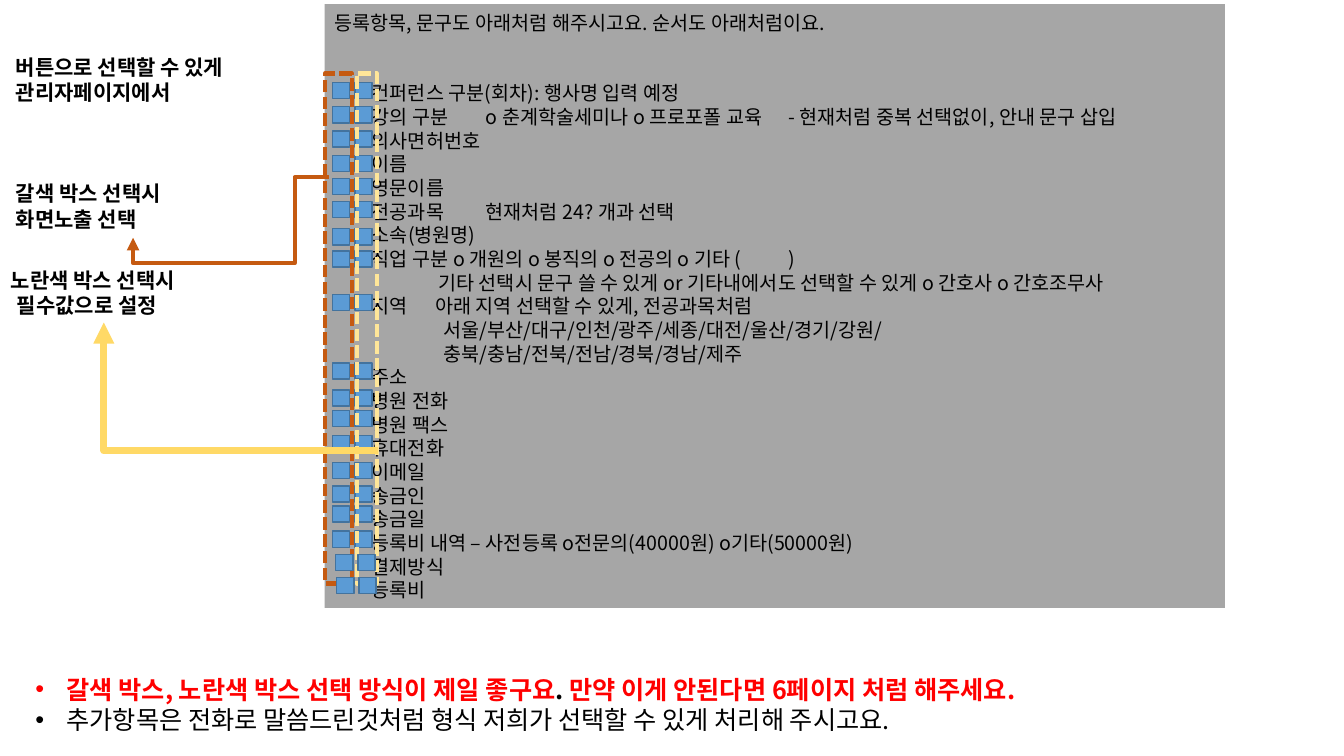
import pptx
import pptx.util
import pptx.dml.color
import pptx.enum.dml
import pptx.enum.shapes
import pptx.enum.text
import pptx.oxml.ns
import lxml.etree

COLORS = {
    "panel": "A6A6A6", "check": "5B9BD5", "check_line": "43739E",
    "brown": "C55A11", "pale_yellow": "FFE699", "yellow": "FFD966",
    "text": "000000", "alert": "FF0000",
}
FONT = "Noto Sans CJK KR"
ITEM, OTHER, REGION = 0.37, 1.03, 1.08
PITCH = 16.9
FIELDS = [
    ("컨퍼런스 구분(회차): 행사명 입력 예정", ITEM, []),
    ("강의 구분\to 춘계학술세미나 o 프로포폴 교육\t- 현재처럼 중복 선택없이, 안내 문구 삽입", ITEM, [1.31, 4.36]),
    ("의사면허번호", ITEM, []),
    ("이름", ITEM, []),
    ("영문이름", ITEM, []),
    ("전공과목\t현재처럼 24? 개과 선택", ITEM, [1.25]),
    ("소속(병원명)", ITEM, []),
    ("직업 구분 o 개원의 o 봉직의 o 전공의 o 기타 (\t)", ITEM, [5.0]),
    ("기타 선택시 문구 쓸 수 있게 or 기타내에서도 선택할 수 있게 o 간호사 o 간호조무사", OTHER, []),
    ("지역\t아래 지역 선택할 수 있게, 전공과목처럼", ITEM, [1.12]),
    ("서울/부산/대구/인천/광주/세종/대전/울산/경기/강원/", REGION, []),
    ("충북/충남/전북/전남/경북/경남/제주", REGION, []),
    ("주소", ITEM, []),
    ("병원 전화", ITEM, []),
    ("병원 팩스", ITEM, []),
    ("휴대전화", ITEM, []),
    ("이메일", ITEM, []),
    ("송금인", ITEM, []),
    ("송금일", ITEM, []),
    ("등록비 내역 – 사전등록 o전문의(40000원) o기타(50000원)", ITEM, []),
    ("결제방식", ITEM, []),
    ("등록비", ITEM, []),
]
CHECK_TOPS = [0.78, 1.02, 1.26, 1.5, 1.73, 1.96, 2.23, 2.45, 2.88,
              3.56, 3.83, 4.03, 4.28, 4.55, 4.78, 4.98, 5.23]
LAST_CHECKS = [(0.11, 5.46), (0.12, 5.69)]


def rgb(name):
    return pptx.dml.color.RGBColor.from_string(COLORS[name])


def inches(values):
    return [pptx.util.Inches(v) for v in values]


def add_xml(parent, tag, **attrs):
    el = lxml.etree.SubElement(parent, pptx.oxml.ns.qn(tag))
    for key, value in attrs.items():
        el.set(key, str(value))
    return el


def style_paragraph(p, size, pitch, color="text", bold=False, before=0,
                    margin=0, indent=0, bullet=None, tabs=()):
    pPr = p._p.get_or_add_pPr()
    pPr.set("marL", str(pptx.util.Inches(margin)))
    pPr.set("indent", str(pptx.util.Inches(indent)))
    if bullet:
        add_xml(pPr, "a:buFont", typeface="Arial")
        add_xml(pPr, "a:buChar", char=bullet)
    if tabs:
        stops = add_xml(pPr, "a:tabLst")
        for tab in tabs:
            add_xml(stops, "a:tab", pos=pptx.util.Inches(tab), algn="l")
    p.alignment = pptx.enum.text.PP_ALIGN.LEFT
    p.line_spacing = pptx.util.Pt(pitch)
    p.space_before = pptx.util.Pt(before)
    p.font.size = pptx.util.Pt(size)
    p.font.bold = bold
    p.font.color.rgb = rgb(color)
    p.font.name = FONT
    add_xml(pPr.find(pptx.oxml.ns.qn("a:defRPr")), "a:ea", typeface=FONT)


def add_rect(s, box, fill=None, line=None, width=1, dashed=False):
    sp = s.shapes.add_shape(pptx.enum.shapes.MSO_SHAPE.RECTANGLE, *inches(box))
    sp.shadow.inherit = False
    if fill:
        sp.fill.solid()
        sp.fill.fore_color.rgb = rgb(fill)
    else:
        sp.fill.background()
    if line:
        sp.line.color.rgb = rgb(line)
        sp.line.width = pptx.util.Pt(width)
    else:
        sp.line.fill.background()
    if dashed:
        sp.line.dash_style = pptx.enum.dml.MSO_LINE.SQUARE_DOT
    return sp


def add_form(s, box):
    tf = add_rect(s, box, fill="panel").text_frame
    tf.word_wrap = True
    tf.vertical_anchor = pptx.enum.text.MSO_ANCHOR.MIDDLE
    p = tf.paragraphs[0]
    p.text = "등록항목, 문구도 아래처럼 해주시고요. 순서도 아래처럼이요."
    style_paragraph(p, 14, PITCH)
    for i, (text, indent, tabs) in enumerate(FIELDS):
        p = tf.add_paragraph()
        p.text = text
        style_paragraph(p, 14, PITCH, before=0 if i else 2 * PITCH,
                        indent=indent, tabs=tabs)


def add_check_pair(s, left, top):
    for x in (left, left + 0.22):
        add_rect(s, (x, top, 0.17, 0.16), "check", "check_line")


def add_checks(s, box):
    left, top, _, _ = box
    for y in CHECK_TOPS:
        add_check_pair(s, left + 0.08, top + y)
    add_rect(s, (left, top + 0.69, 0.27, 5.06), None, "brown", 3, True)
    add_rect(s, (left + 0.32, top + 0.69, 0.2, 5.06), None, "pale_yellow", 3, True)
    for x, y in LAST_CHECKS:
        add_check_pair(s, left + x, top + y)


def add_label(s, box, lines):
    tf = s.shapes.add_textbox(*inches(box)).text_frame
    tf.word_wrap = True
    for i, (text, before, indent) in enumerate(lines):
        p = tf.add_paragraph() if i else tf.paragraphs[0]
        p.text = text
        style_paragraph(p, 15, 18.1, bold=True, before=before, indent=indent)


def add_arrow(s, start, end, color, width, preset, adjusts=()):
    c = s.shapes.add_connector(pptx.enum.shapes.MSO_CONNECTOR.ELBOW,
                               *inches(start + end))
    c.line.color.rgb = rgb(color)
    c.line.width = pptx.util.Pt(width)
    spPr = c._element.spPr
    add_xml(c.line._get_or_add_ln(), "a:tailEnd", type="triangle")
    add_xml(spPr, "a:effectLst")
    xfrm = spPr.find(pptx.oxml.ns.qn("a:xfrm"))
    xfrm.set("rot", "10800000")
    xfrm.set("flipH", "0")
    xfrm.set("flipV", "1" if end[1] > start[1] else "0")
    geom = spPr.find(pptx.oxml.ns.qn("a:prstGeom"))
    geom.set("prst", preset)
    guides = geom.find(pptx.oxml.ns.qn("a:avLst"))
    if guides is None:
        guides = add_xml(geom, "a:avLst")
    for i, value in enumerate(adjusts, 1):
        add_xml(guides, "a:gd", name=f"adj{i}", fmla=f"val {value}")


def add_requests(s, box):
    body = s.placeholders[1]
    body.left, body.top, body.width, body.height = inches(box)
    tf = body.text_frame
    tf.word_wrap = True
    tf.auto_size = pptx.enum.text.MSO_AUTO_SIZE.NONE
    tf.vertical_anchor = pptx.enum.text.MSO_ANCHOR.TOP
    bullet = dict(margin=0.31, indent=-0.31, bullet="•")
    p = tf.paragraphs[0]
    style_paragraph(p, 18, 22, "alert", True, **bullet)
    for text, color in [("갈색 박스, 노란색 박스 선택 방식이 제일 좋구요", "alert"),
                        (". ", "text"),
                        ("만약 이게 안된다면 6페이지 처럼 해주세요.", "alert")]:
        r = p.add_run()
        r.text = text
        r.font.color.rgb = rgb(color)
    p = tf.add_paragraph()
    p.text = "추가항목은 전화로 말씀드린것처럼 형식 저희가 선택할 수 있게 처리해 주시고요."
    style_paragraph(p, 18, 22, **bullet)


def main():
    prs = pptx.Presentation()
    prs.slide_width, prs.slide_height = inches((13.33, 7.5))
    s = prs.slides.add_slide(prs.slide_layouts[1])
    title = s.shapes.title._element
    title.getparent().remove(title)
    form = (3.22, 0.04, 8.93, 5.99)
    add_form(s, form)
    add_checks(s, form)
    add_label(s, (0.06, 0.49, 2.53, 1.87), [
        ("버튼으로 선택할 수 있게", 0, 0), ("관리자페이지에서", 0, 0),
        ("갈색 박스 선택시", 54, 0), ("화면노출 선택", 0, 0)])
    add_label(s, (0.01, 2.6, 2.03, 0.61), [
        ("노란색 박스 선택시", 0, 0), ("필수값으로 설정", 0, 0.06)])
    add_arrow(s, (3.26, 1.76), (1.32, 2.36), "brown", 3,
              "bentConnector4", (17400, 141700))
    add_arrow(s, (3.75, 4.47), (1.03, 3.2), "yellow", 5, "bentConnector2")
    add_requests(s, (0.25, 6.63, 11.33, 0.71))
    prs.save("out.pptx")


if __name__ == "__main__":
    main()
